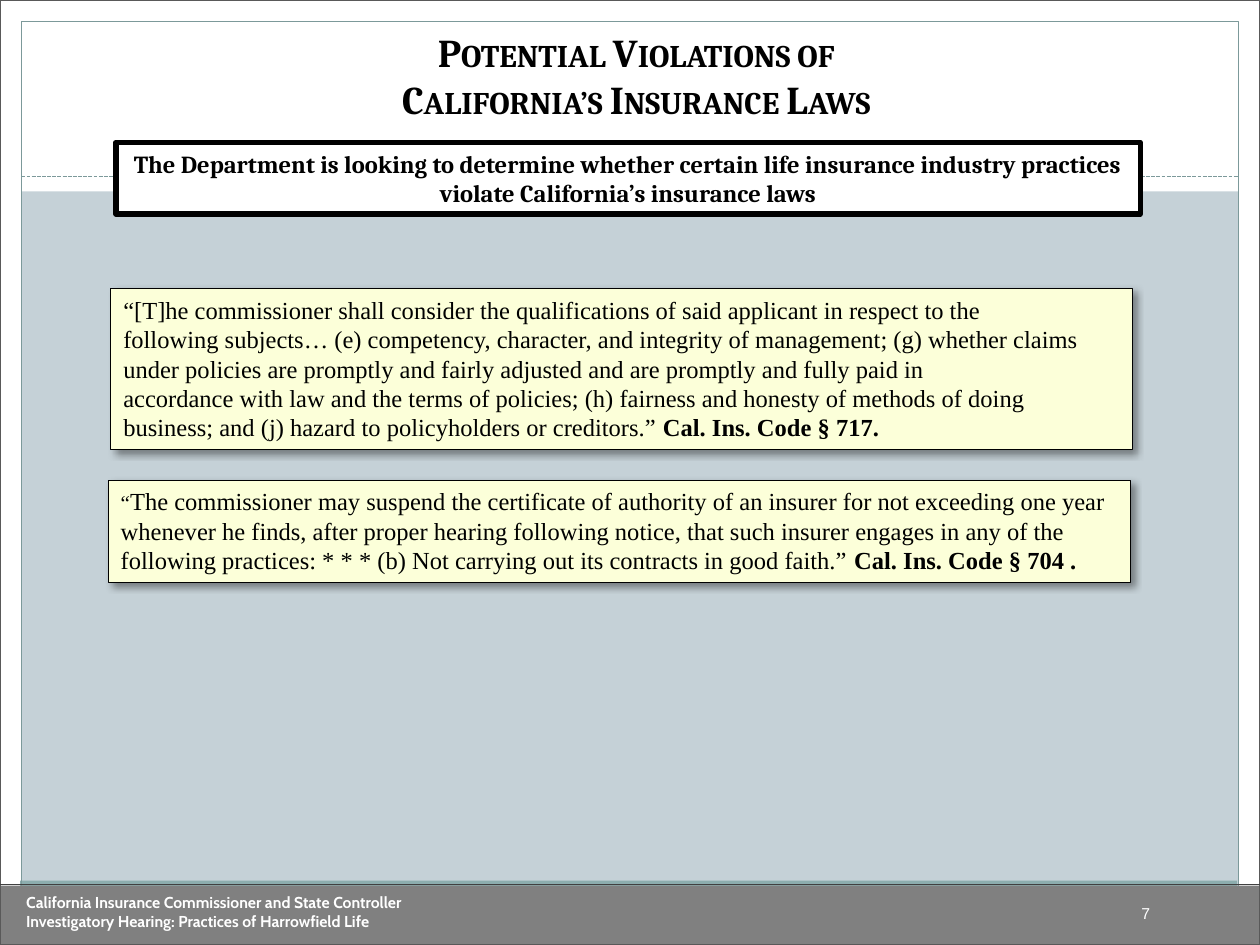
from copy import deepcopy
from dataclasses import dataclass
from typing import Optional

from lxml import etree
from pptx import Presentation
from pptx.dml.color import RGBColor
from pptx.enum.dml import MSO_LINE
from pptx.enum.shapes import MSO_CONNECTOR, MSO_SHAPE
from pptx.enum.text import MSO_ANCHOR, MSO_AUTO_SIZE, PP_ALIGN
from pptx.oxml.ns import qn
from pptx.util import Inches, Pt

RECT = MSO_SHAPE.RECTANGLE
STRAIGHT = MSO_CONNECTOR.STRAIGHT
DASH = MSO_LINE.SQUARE_DOT
NO_FIT = MSO_AUTO_SIZE.NONE
CENTER, LEFT = PP_ALIGN.CENTER, PP_ALIGN.LEFT
TOP, MIDDLE, BOTTOM = MSO_ANCHOR.TOP, MSO_ANCHOR.MIDDLE, MSO_ANCHOR.BOTTOM

WHITE = RGBColor(0xFF, 0xFF, 0xFF)
BLACK = RGBColor(0x00, 0x00, 0x00)
BACKGROUND = RGBColor(0xC5, 0xD1, 0xD7)
TEAL = RGBColor(0x8C, 0xAD, 0xAE)
FRAME = RGBColor(0x7C, 0x99, 0x9A)
FOOTER = RGBColor(0x80, 0x80, 0x80)
FOOTER_RULE = RGBColor(0x40, 0x40, 0x40)
EDGE = RGBColor(0x59, 0x59, 0x59)
CREAM = RGBColor(0xFC, 0xFF, 0xD9)

TITLE = {"name": "Cambria", "size": Pt(22.5), "bold": True, "color": BLACK}
CALLOUT = {"name": "Cambria", "size": Pt(14), "bold": True, "color": BLACK}
QUOTE = {"name": "Times New Roman", "size": Pt(14), "color": BLACK}
OPENING = {**QUOTE, "size": Pt(12)}
CITATION = {**QUOTE, "bold": True}
FOOTER_TEXT = {"name": "Cabin", "size": Pt(9), "bold": True, "color": WHITE}
NUMBER = {"name": "Arial", "size": Pt(9), "color": WHITE}


@dataclass
class Box:
    left: float
    top: float
    width: float
    height: float
    fill: Optional[RGBColor] = None
    line: Optional[RGBColor] = None
    weight: float = 0.75


@dataclass
class Rule:
    left: float
    right: float
    y: float
    color: RGBColor
    dashed: bool = False


@dataclass
class Quote:
    box: Box
    paragraphs: list


def place(sp, box: Box) -> None:
    for side in ("left", "top", "width", "height"):
        setattr(sp, side, Inches(getattr(box, side)))


def format_run(r, style: dict) -> None:
    for key, value in style.items():
        if key == "color":
            r.font.color.rgb = value
        else:
            setattr(r.font, key, value)


def add_box(s, box: Box):
    sp = s.shapes.add_shape(RECT, 0, 0, 0, 0)
    place(sp, box)
    sp.shadow.inherit = False
    if box.fill is None:
        sp.fill.background()
    else:
        sp.fill.solid()
        sp.fill.fore_color.rgb = box.fill
    if box.line is None:
        sp.line.fill.background()
    else:
        sp.line.color.rgb = box.line
        sp.line.width = Pt(box.weight)
    return sp


def add_rule(s, rule: Rule) -> None:
    y = Inches(rule.y)
    cx = s.shapes.add_connector(STRAIGHT, Inches(rule.left), y, Inches(rule.right), y)
    cx.line.color.rgb = rule.color
    cx.line.width = Pt(0.75)
    if rule.dashed:
        cx.line.dash_style = DASH
    etree.SubElement(cx._element.spPr, qn("a:effectLst"))


def write(sp, paragraphs: list, align=LEFT, anchor=TOP) -> None:
    """Fill a shape with paragraphs, each a list of (text, style) runs."""
    tf = sp.text_frame
    tf.word_wrap = True
    tf.auto_size = NO_FIT
    tf.vertical_anchor = anchor
    for i, runs in enumerate(paragraphs):
        p = tf.add_paragraph() if i else tf.paragraphs[0]
        p.alignment = align
        for text, style in runs:
            r = p.add_run()
            r.text = text
            format_run(r, style)


def add_text(s, box: Box, paragraphs: list, anchor=TOP) -> None:
    sp = s.shapes.add_textbox(0, 0, 0, 0)
    place(sp, box)
    write(sp, paragraphs, anchor=anchor)


def add_shadow(sp) -> None:
    effects = sp._element.spPr.find(qn("a:effectLst"))
    shadow = etree.SubElement(effects, qn("a:outerShdw"), blurRad=str(Pt(4)),
                              dist=str(Pt(3)), dir="2700000", algn="tl", rotWithShape="0")
    color = etree.SubElement(shadow, qn("a:srgbClr"), val=str(BLACK))
    etree.SubElement(color, qn("a:alpha"), val="40000")


def set_title(s, box: Box, lines: list) -> None:
    title = s.shapes.title
    s.shapes._spTree.append(title._element)  # in front of the white band
    place(title, box)
    write(title, [[]], CENTER, BOTTOM)
    p = title.text_frame.paragraphs[0]
    for i, line in enumerate(lines):
        if i:
            p.add_line_break()
        r = p.add_run()
        r.text = line
        format_run(r, TITLE)
        r.font._element.set("cap", "small")
    for br in p._p.findall(qn("a:br")):
        br.append(deepcopy(p.runs[0].font._element))


FRAME_PARTS = [
    Box(0, 0, 10, 1.52, WHITE),
    Box(0, 0, 0.17, 7.5, WHITE),
    Box(9.83, 0, 0.17, 7.5, WHITE),
    Box(0.16, 6.99, 9.66, 0.34, TEAL),
    Box(0.17, 0.17, 9.66, 7.16, line=FRAME),
    Box(0, 7.03, 10, 0.47, FOOTER),
    Box(0, 0, 10, 7.5, line=EDGE),
]
RULES = [Rule(0.17, 9.83, 1.4, FRAME, dashed=True), Rule(0, 10, 7.02, FOOTER_RULE)]
FOOTER_LINES = [
    "California Insurance Commissioner and State Controller",
    "Investigatory Hearing: Practices of Harrowfield Life",
]
QUOTES = [
    Quote(Box(0.86, 3.81, 8.11, 0.81, CREAM, BLACK, 0.5), [
        [("“", OPENING),
         ("The commissioner may suspend the certificate of authority of an insurer for not "
          "exceeding one year whenever he finds, after proper hearing following notice, that "
          "such insurer engages in any of the following practices: * * * (b) Not carrying out "
          "its contracts in good faith.” ", QUOTE),
         ("Cal. Ins. Code § 704 .", CITATION)],
    ]),
    Quote(Box(0.88, 2.29, 8.11, 1.28, CREAM, BLACK, 0.5), [
        [("“[T]he commissioner shall consider the qualifications of said applicant "
          "in respect to the", QUOTE)],
        [("following subjects… (e) competency, character, and integrity of management; "
          "(g) whether claims under policies are promptly and fairly adjusted and are "
          "promptly and fully paid in", QUOTE)],
        [("accordance with law and the terms of policies; (h) fairness and honesty of "
          "methods of doing business; and (j) hazard to policyholders or creditors.” ", QUOTE),
         ("Cal. Ins. Code § 717.", CITATION)],
    ]),
]


def main() -> None:
    prs = Presentation()
    prs.slide_width, prs.slide_height = Inches(10), Inches(7.5)
    s = prs.slides.add_slide(prs.slide_layouts[5])
    s.background.fill.solid()
    s.background.fill.fore_color.rgb = BACKGROUND

    # Frame and footer
    for box in FRAME_PARTS:
        add_box(s, box)
    for rule in RULES:
        add_rule(s, rule)
    add_text(s, Box(8.96, 7.12, 0.62, 0.25), [[("7", NUMBER)]], MIDDLE)
    add_text(s, Box(0.11, 7.04, 5.94, 0.4), [[(line, FOOTER_TEXT)] for line in FOOTER_LINES])

    # Title and callout
    set_title(s, Box(0.21, 0.24, 9.68, 0.78),
              ["Potential Violations of", "California’s Insurance Laws"])
    callout = add_box(s, Box(0.92, 1.13, 8.13, 0.57, WHITE, BLACK, 3))
    write(callout, [[("The Department is looking to determine whether certain life insurance "
                      "industry practices violate California’s insurance laws", CALLOUT)]], CENTER)

    # Quoted code sections
    for quote in QUOTES:
        sp = add_box(s, quote.box)
        add_shadow(sp)
        write(sp, quote.paragraphs)

    prs.save("out.pptx")


if __name__ == "__main__":
    main()
